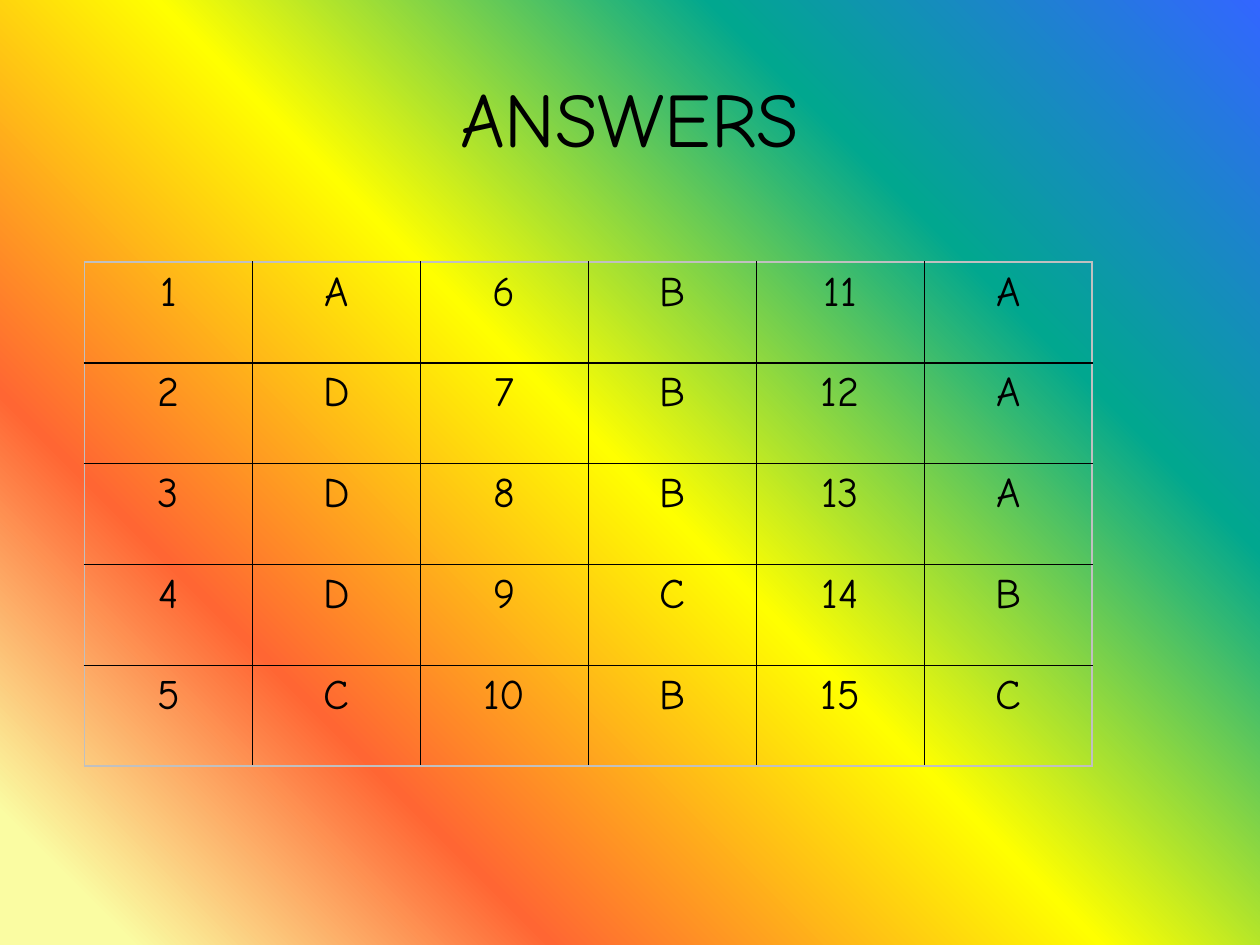
import dataclasses

import pptx
import pptx.dml.color
import pptx.enum.text
import pptx.oxml
import pptx.oxml.ns
import pptx.util
from pptx.util import Inches


@dataclasses.dataclass(frozen=True)
class Theme:
    font: str = "Comic Neue"
    text: str = "000000"
    grid: str = "000000"
    frame: str = "C0C0C0"
    title_size: int = 44
    cell_size: int = 24
    border_width: int = 1
    gradient: tuple = (
        (6, "FAFCA2"),
        (25, "FF6633"),
        (50, "FFFF00"),
        (75, "01A78F"),
        (100, "3366FF"),
    )


class SlideBuilder:
    def __init__(self, presentation, theme):
        self.theme = theme
        self.slide = presentation.slides.add_slide(presentation.slide_layouts[6])

    def background(self):
        stops = "".join(
            f'<a:gs pos="{position * 1000}"><a:srgbClr val="{color}"/></a:gs>'
            for position, color in self.theme.gradient
        )
        background = pptx.oxml.parse_xml(
            f'<p:bg {pptx.oxml.ns.nsdecls("p", "a")}><p:bgPr>'
            f'<a:gradFill rotWithShape="0"><a:gsLst>{stops}</a:gsLst>'
            '<a:path path="circle"><a:fillToRect t="100000" r="100000"/></a:path>'
            "</a:gradFill><a:effectLst/></p:bgPr></p:bg>"
        )
        self.slide.element.cSld.insert(0, background)

    def add_text(self, frame, text, size):
        paragraph = frame.paragraphs[0]
        paragraph.alignment = pptx.enum.text.PP_ALIGN.CENTER
        run = paragraph.add_run()
        run.text = text
        font_format = {
            "name": self.theme.font,
            "size": pptx.util.Pt(size),
            "bold": False,
        }
        for name, value in font_format.items():
            setattr(run.font, name, value)
        run.font.color.rgb = pptx.dml.color.RGBColor.from_string(self.theme.text)

    def title(self, text, left, top, width, height):
        shape = self.slide.shapes.add_textbox(left, top, width, height)
        frame_format = {
            "word_wrap": True,
            "vertical_anchor": pptx.enum.text.MSO_ANCHOR.MIDDLE,
        }
        for name, value in frame_format.items():
            setattr(shape.text_frame, name, value)
        self.add_text(shape.text_frame, text, self.theme.title_size)

    def borders(self, cell, outer_sides):
        properties = cell._tc.get_or_add_tcPr()
        width = pptx.util.Pt(self.theme.border_width)
        for index, side in enumerate("LRTB"):
            color = self.theme.frame if side in outer_sides else self.theme.grid
            line = pptx.oxml.parse_xml(
                f'<a:ln{side} {pptx.oxml.ns.nsdecls("a")} w="{width}">'
                f'<a:solidFill><a:srgbClr val="{color}"/></a:solidFill></a:ln{side}>'
            )
            properties.insert(index, line)

    def table(self, rows, left, top, width, height):
        row_count, column_count = len(rows), len(rows[0])
        table = self.slide.shapes.add_table(
            row_count, column_count, left, top, width, height
        ).table
        for name, value in {"first_row": False, "horz_banding": False}.items():
            setattr(table, name, value)
        for row, values in enumerate(rows):
            for column, value in enumerate(values):
                cell = table.cell(row, column)
                cell.fill.background()
                self.add_text(cell.text_frame, value, self.theme.cell_size)
                edges = {
                    "L": column == 0,
                    "R": column == column_count - 1,
                    "T": row == 0,
                    "B": row == row_count - 1,
                }
                self.borders(cell, [side for side, outer in edges.items() if outer])


def main():
    presentation = pptx.Presentation()
    presentation.slide_width = Inches(10)
    presentation.slide_height = Inches(7.5)

    answers = "ADDDCBBBCBAAABC"
    row_count = 5
    rows = [
        [
            text
            for index in range(row, len(answers), row_count)
            for text in (str(index + 1), answers[index])
        ]
        for row in range(row_count)
    ]

    builder = SlideBuilder(presentation, Theme())
    builder.background()
    builder.title("ANSWERS", Inches(0.5), Inches(0.3), Inches(9), Inches(1.25))
    builder.table(rows, Inches(0.67), Inches(2.08), Inches(8), Inches(4))
    presentation.save("out.pptx")


if __name__ == "__main__":
    main()
